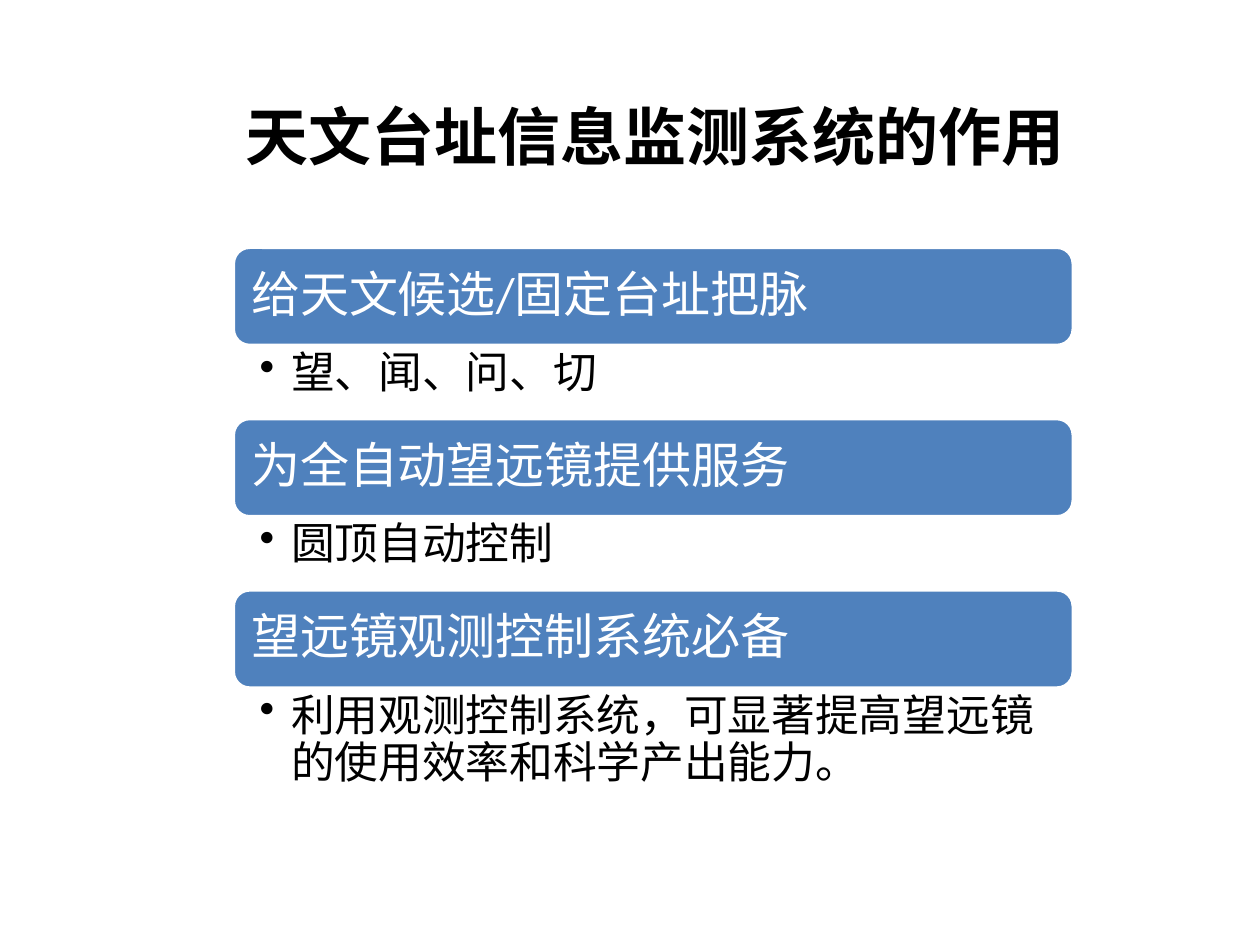
import pptx
import pptx.util
import pptx.dml.color
import pptx.enum.shapes
import pptx.enum.text
import pptx.oxml.ns
import lxml.etree

Pt = pptx.util.Pt
BLACK = pptx.dml.color.RGBColor(0x00, 0x00, 0x00)
WHITE = pptx.dml.color.RGBColor(0xFF, 0xFF, 0xFF)
BLUE = pptx.dml.color.RGBColor(0x4F, 0x81, 0xBD)

TITLE = "天文台址信息监测系统的作用"
SECTIONS = [
    ("给天文候选/固定台址把脉", "望、闻、问、切", 41.8),
    ("为全自动望远镜提供服务", "圆顶自动控制", 41.8),
    ("望远镜观测控制系统必备", "利用观测控制系统，可显著提高望远镜的使用效率和科学产出能力。", 65.5),
]
HEADING_HEIGHT = 56.1


def set_values(target, values):
    for name, value in values.items():
        setattr(target, name, value)


def write_text(shape, text, size, color, frame_values, bold=False, line_spacing=1.0):
    frame = shape.text_frame
    set_values(frame, {"word_wrap": True,
                       "auto_size": pptx.enum.text.MSO_AUTO_SIZE.NONE, **frame_values})
    para = frame.paragraphs[0]
    set_values(para, {"alignment": pptx.enum.text.PP_ALIGN.LEFT,
                      "line_spacing": line_spacing})
    span = para.add_run()
    span.text = text
    set_values(span.font, {"name": "Calibri", "size": Pt(size), "bold": bold})
    span.font.color.rgb = color
    return para


def add_bullet(para, indent):
    properties = para._p.get_or_add_pPr()
    properties.set("marL", str(Pt(indent)))
    properties.set("indent", str(-Pt(indent)))
    bullet = lxml.etree.SubElement(properties, pptx.oxml.ns.qn("a:buChar"))
    bullet.set("char", "•")


def place_title(page, left, top, width, height):
    title = page.shapes.title
    set_values(title, {"left": Pt(left), "top": Pt(top),
                       "width": Pt(width), "height": Pt(height)})
    write_text(title, TITLE, 36, BLACK,
               {"vertical_anchor": pptx.enum.text.MSO_ANCHOR.MIDDLE}, bold=True)


def place_heading(page, text, left, top, width, height):
    box = page.shapes.add_shape(pptx.enum.shapes.MSO_SHAPE.ROUNDED_RECTANGLE,
                                Pt(left), Pt(top), Pt(width), Pt(height))
    box.shadow.inherit = False
    box.fill.solid()
    box.fill.fore_color.rgb = BLUE
    box.line.color.rgb = WHITE
    box.line.width = Pt(2)
    write_text(box, text, 28, WHITE,
               {"vertical_anchor": pptx.enum.text.MSO_ANCHOR.MIDDLE,
                "margin_left": Pt(7.5), "margin_right": Pt(7.5)}, line_spacing=0.9)


def place_list(page, text, left, top, width, height):
    box = page.shapes.add_textbox(Pt(left), Pt(top), Pt(width), Pt(height))
    para = write_text(box, text, 25, BLACK,
                      {"margin_left": Pt(15), "margin_right": Pt(18),
                       "margin_top": Pt(3), "margin_bottom": Pt(3)}, line_spacing=0.9)
    add_bullet(para, 18)


def place_sections(page, left, top, width):
    for heading, item, list_height in SECTIONS:
        place_heading(page, heading, left, top, width, HEADING_HEIGHT)
        place_list(page, item, left, top + HEADING_HEIGHT, width, list_height)
        top += HEADING_HEIGHT + list_height


def main():
    deck = pptx.Presentation()
    set_values(deck, {"slide_width": Pt(720), "slide_height": Pt(540)})
    page = deck.slides.add_slide(deck.slide_layouts.get_by_name("Title Only"))
    place_title(page, 133.3, 52, 510.5, 51)
    place_sections(page, 133.3, 141.3, 480)
    deck.save("out.pptx")


if __name__ == "__main__":
    main()
